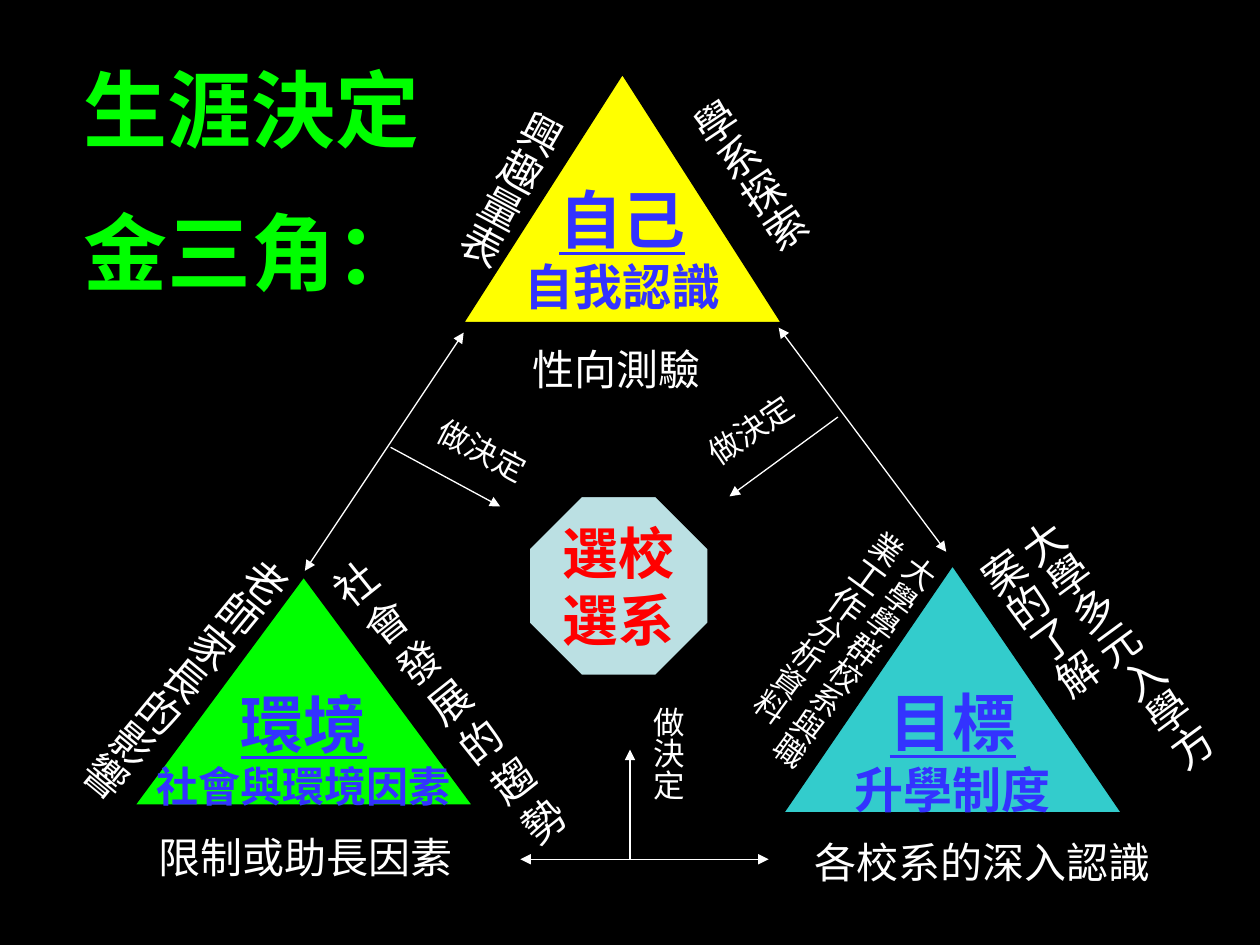
import pptx
import pptx.util
import pptx.dml.color
import pptx.enum.shapes
import pptx.enum.text
import pptx.oxml.ns
import lxml.etree

KIND = pptx.enum.shapes.MSO_SHAPE
ALIGN = pptx.enum.text.PP_ALIGN
qn = pptx.oxml.ns.qn

COLS, ROWS = 100, 75
WIDE, HIGH = pptx.util.Inches(10), pptx.util.Inches(7.5)

THEME = {
    "back": "000000", "ink": "FFFFFF", "blue": "3333FF", "red": "FF0000",
    "green": "00FF00", "gold": "FFFF00", "teal": "33CCCC", "pale": "BBE0E3",
    "font": "Arial", "noto": "Noto Sans CJK SC", "deja": "DejaVu Sans",
    "title": 48, "head": 36, "core": 32, "sub": 28, "text": 24, "mid": 20, "small": 18,
    "line": 0.75,
}

SHAPES = [
    (KIND.ISOSCELES_TRIANGLE, (36.8, 5.9, 25.2, 19.7), "gold", "blue", 2.5,
     [("自己", "head", "noto", True), ("自我認識", "sub", "noto", False)]),
    (KIND.ISOSCELES_TRIANGLE, (10.7, 45.8, 26.8, 18.1), "green", "blue", 0.5,
     [("環境", "head", "font", True), ("社會與環境因素", "text", "font", False)]),
    (KIND.ISOSCELES_TRIANGLE, (62.2, 44.9, 26.8, 19.6), "teal", "blue", 0.5,
     [("目標", "head", "font", True), ("升學制度", "sub", "deja", False)]),
    (KIND.OCTAGON, (42, 39.4, 14.2, 14.2), "pale", "red", 0.5,
     [("選校", "core", "font", False), ("選系", "core", "font", False)]),
]

BOTH, END = ("headEnd", "tailEnd"), ("tailEnd",)
LINES = [
    ((36.8, 26.4), (24.2, 45.3), BOTH),
    ((61.8, 26), (75.1, 43.8), BOTH),
    ((41.3, 68.2), (61, 68.2), BOTH),
    ((31, 35.5), (39.7, 40.2), END),
    ((66.5, 33.1), (57.9, 39.4), END),
    ((50, 68.2), (50, 59.5), END),
]

LABELS = [
    ((41.3, 26.8, 16.5, 5), 0, False, None, [("性向測驗", "text")]),
    ((11.6, 65.5, 26, 5), 0, False, None, [("限制或助長因素", "text")]),
    ((61, 65.9, 33.9, 5), 0, False, ALIGN.CENTER, [("各校系的深入認識", "text")]),
    ((36.7, 7, 6.1, 16.5), 28.2, True, None, [("興趣量表", "text")]),
    ((57.4, 6.2, 6.1, 20.4), 326.4, True, None, [("學系探索", "text")]),
    ((50, 55.1, 5, 11.5), 0, True, None, [("做決定", "small")]),
    ((54.8, 31.9, 10.2, 4), 325.8, False, None, [("做決定", "small")]),
    ((33.5, 33.9, 10.2, 4), 27.5, False, None, [("做決定", "small")]),
    ((9.9, 40.4, 6.1, 29.4), 39.4, True, None, [("老師家長的影響", "text")]),
    ((33.1, 41.1, 5.5, 29.3), 321.5, False, None, [("社會發展的趨勢", "text")]),
    ((81.8, 40, 10.1, 26), 323.7, True, None, [("大學多元入學方案的了解", "text")]),
    ((61.1, 40, 8.4, 24.4), 36.2, True, None,
     [("大學學群校系與職業", "small"), ("工作", "mid"), ("分析資料", "small")]),
]

TITLE = ((3.3, 4.1, 33.3, 21.2), ["生涯決定", "金三角："])


def tint(name):
    return pptx.dml.color.RGBColor.from_string(THEME[name])


def across(col):
    return round(WIDE * col / COLS)


def down(row):
    return round(HIGH * row / ROWS)


def place(box):
    return across(box[0]), down(box[1]), across(box[2]), down(box[3])


def style(thing, form):
    for key, value in form.items():
        setattr(thing, key, value)


def add_run(para, text, size, hue, font="font", **form):
    run = para.add_run()
    run.text = text
    style(run.font, {"name": THEME[font], "size": pptx.util.Pt(THEME[size]), **form})
    run.font.color.rgb = tint(hue)


def next_para(frame, first):
    return frame.paragraphs[0] if first else frame.add_paragraph()


def space(para):
    gap = lxml.etree.SubElement(para._p.get_or_add_pPr(), qn("a:spcBef"))
    lxml.etree.SubElement(gap, qn("a:spcPct"), val="50000")


def add_shape(slide, kind, box, fill, hue, foot, rows):
    shape = slide.shapes.add_shape(kind, *place(box))
    shape.shadow.inherit = False
    shape.fill.solid()
    shape.fill.fore_color.rgb = tint(fill)
    shape.line.color.rgb = tint("back")
    shape.line.width = pptx.util.Pt(THEME["line"])
    frame = shape.text_frame
    style(frame, {"word_wrap": False, "margin_bottom": down(foot),
                  "vertical_anchor": pptx.enum.text.MSO_ANCHOR.MIDDLE})
    for i, (text, size, font, under) in enumerate(rows):
        para = next_para(frame, i == 0)
        para.alignment = ALIGN.CENTER
        add_run(para, text, size, hue, font, bold=True, underline=under)


def add_line(slide, start, stop, ends):
    line = slide.shapes.add_connector(
        pptx.enum.shapes.MSO_CONNECTOR.STRAIGHT,
        across(start[0]), down(start[1]), across(stop[0]), down(stop[1]))
    line.line.color.rgb = tint("ink")
    line.line.width = pptx.util.Pt(THEME["line"])
    for end in ends:
        lxml.etree.SubElement(line.line._get_or_add_ln(), qn("a:" + end), type="triangle")
    lxml.etree.SubElement(line._element.spPr, qn("a:effectLst"))


def add_box(slide, box, turn=0, tall=False):
    shape = slide.shapes.add_textbox(*place(box))
    shape.rotation = turn
    frame = shape.text_frame
    style(frame, {"word_wrap": True,
                  "auto_size": pptx.enum.text.MSO_AUTO_SIZE.SHAPE_TO_FIT_TEXT})
    if tall:
        frame._txBody.bodyPr.set("vert", "eaVert")
    return frame


def add_label(slide, box, turn, tall, align, runs):
    para = add_box(slide, box, turn, tall).paragraphs[0]
    para.alignment = align
    space(para)
    for text, size in runs:
        add_run(para, text, size, "ink")


def add_title(slide, box, rows):
    frame = add_box(slide, box)
    for i, text in enumerate(rows):
        para = next_para(frame, i == 0)
        para.alignment = ALIGN.CENTER
        space(para)
        add_run(para, text, "title", "green", "deja", bold=True)


def main():
    deck = pptx.Presentation()
    style(deck, {"slide_width": WIDE, "slide_height": HIGH})
    slide = deck.slides.add_slide(deck.slide_layouts[6])
    slide.background.fill.solid()
    slide.background.fill.fore_color.rgb = tint("back")
    for draw, items in ((add_shape, SHAPES), (add_line, LINES),
                        (add_label, LABELS), (add_title, [TITLE])):
        for item in items:
            draw(slide, *item)
    deck.save("out.pptx")


if __name__ == "__main__":
    main()
